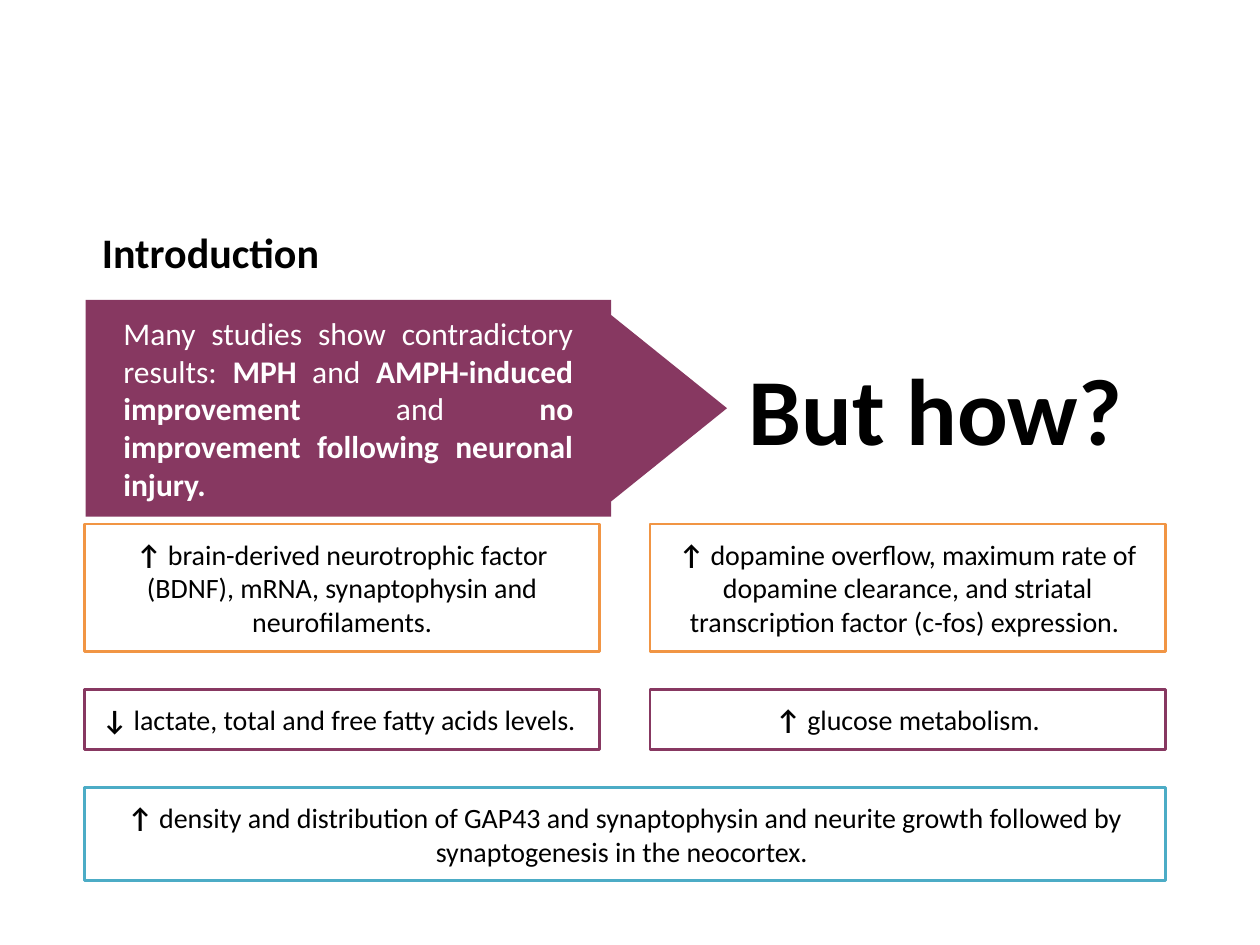
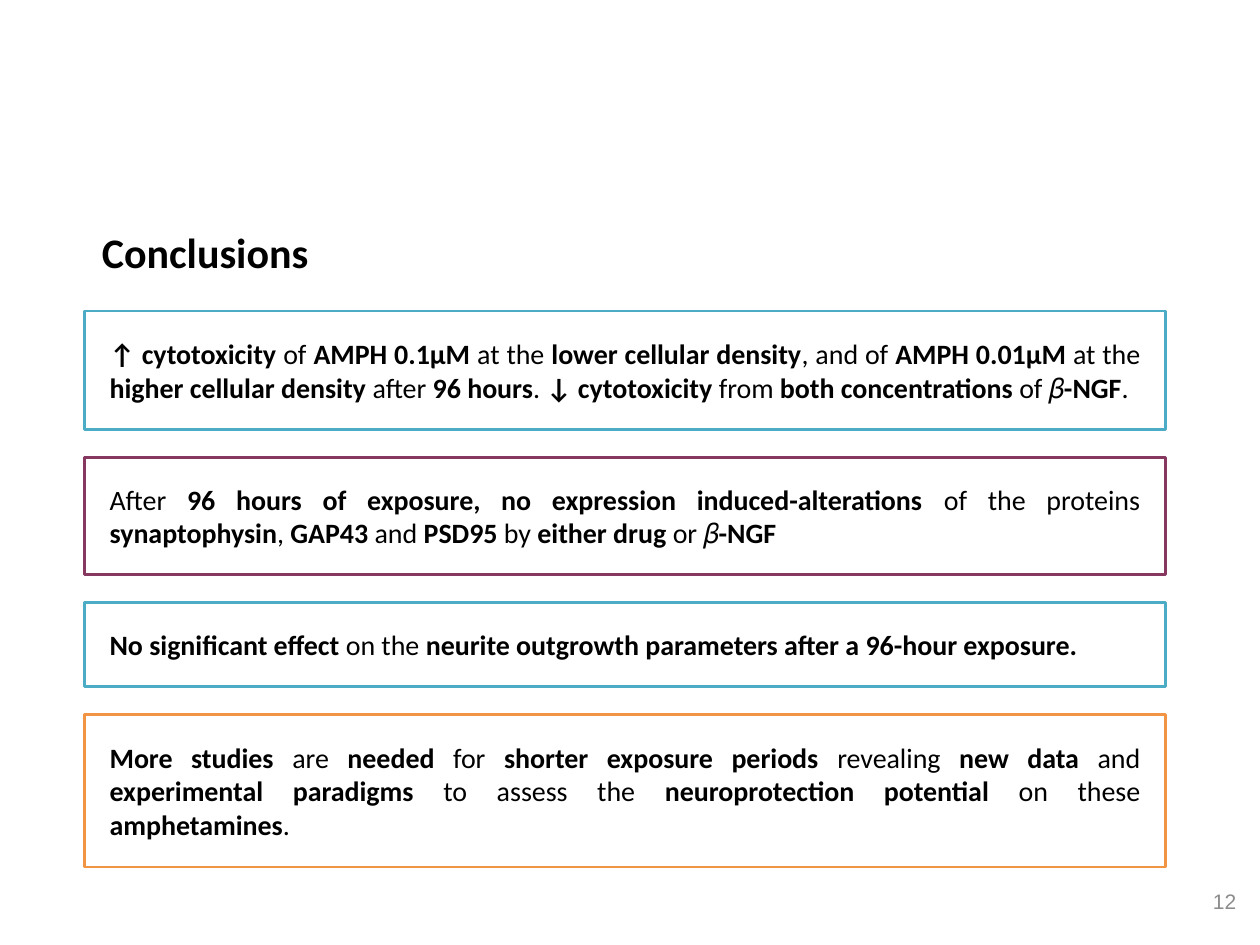
from pptx import Presentation
from pptx.dml.color import RGBColor
from pptx.enum.shapes import MSO_SHAPE as SHAPE
from pptx.enum.text import MSO_ANCHOR as ANCHOR, PP_ALIGN as ALIGN
from pptx.util import Inches, Pt

THEME = {
    "font": "Calibri", "number_font": "Arial",
    "black": "000000", "white": "FFFFFF", "grey": "8C8C8C",
    "blue": "4CACC6", "plum": "873861", "orange": "F19544",
    "title": 24, "body": 16, "claim": 18, "question": 54, "number": 12,
    "line": 1.5,
}
LEFT, WIDTH = 0.67, 8.58

CLAIM = ("Many studies show contradictory results: **MPH** and **AMPH-induced improvement** "
         "and **no improvement following neuronal injury.**")
QUESTION = "But how?"

FINDINGS = [
    (1.01, "orange", [
        "**↑ **brain-derived neurotrophic factor (BDNF), mRNA, synaptophysin and neurofilaments.",
        "**↑ **dopamine overflow, maximum rate of dopamine clearance, and striatal "
        "transcription factor (c-fos) expression. ",
    ]),
    (0.48, "plum", [
        "**↓ **lactate, total and free fatty acids levels. ",
        "**↑** glucose metabolism.",
    ]),
    (0.74, "blue", [
        "**↑ **density and distribution of GAP43 and synaptophysin and neurite growth "
        "followed by synaptogenesis in the neocortex. ",
    ]),
]

CONCLUSIONS = [
    (0.94, "blue", [
        "**↑ cytotoxicity** of **AMPH 0.1μM **at the **lower cellular density**, and of "
        "**AMPH 0.01μM **at the **higher cellular density **after **96 hours**. "
        "**↓ cytotoxicity** from **both concentrations **of **𝛽-NGF**.",
    ]),
    (0.93, "plum", [
        "After** 96 hours of exposure, no expression induced-alterations** of the proteins "
        "**synaptophysin**, **GAP43** and **PSD95** by **either drug **or** 𝛽-NGF**",
    ]),
    (0.67, "blue", [
        "**No significant effect **on the **neurite outgrowth parameters after a 96-hour exposure.**",
    ]),
    (1.21, "orange", [
        "**More studies **are **needed** for **shorter exposure periods **revealing **new data **and "
        "**experimental paradigms** to assess the **neuroprotection potential **on these "
        "**amphetamines**.",
    ]),
]


def write(sp, text, size, color="black", font="font", align=ALIGN.LEFT, inset=(0.1, 0.05), **frame):
    tf = sp.text_frame
    x, y = map(Inches, inset)
    settings = {"word_wrap": True, "margin_left": x, "margin_right": x,
                "margin_top": y, "margin_bottom": y, **frame}
    for name, value in settings.items():
        setattr(tf, name, value)
    p = tf.paragraphs[0]
    p.alignment = align
    for i, part in enumerate(text.split("**")):
        if part:
            r = p.add_run()
            r.text = part
            for name, value in {"name": THEME[font], "size": Pt(THEME[size]), "bold": i % 2 == 1}.items():
                setattr(r.font, name, value)
            r.font.color.rgb = RGBColor.from_string(THEME[color])


def add_text(s, box, text, size, **fmt):
    write(s.shapes.add_textbox(*map(Inches, box)), text, size, **fmt)


def add_block(s, kind, box, fill=None, line=None):
    sp = s.shapes.add_shape(kind, *map(Inches, box))
    sp.shadow.inherit = False
    if fill:
        sp.fill.solid()
        sp.fill.fore_color.rgb = RGBColor.from_string(THEME[fill])
    else:
        sp.fill.background()
    if line:
        sp.line.color.rgb = RGBColor.from_string(THEME[line])
        sp.line.width = Pt(THEME["line"])
    else:
        sp.line.fill.background()
    return sp


def add_rows(s, rows, top, gap, align, inset, col_gap=0.4):
    for height, color, texts in rows:
        width = (WIDTH - col_gap * (len(texts) - 1)) / len(texts)
        for i, text in enumerate(texts):
            box = (LEFT + i * (width + col_gap), top, width, height)
            sp = add_block(s, SHAPE.RECTANGLE, box, line=color)
            write(sp, text, "body", align=align, inset=(inset, inset), vertical_anchor=ANCHOR.MIDDLE)
        top += height + gap


def add_slide(prs, title):
    s = prs.slides.add_slide(prs.slide_layouts[6])
    add_text(s, (0.71, 1.75, WIDTH, 0.5), f"**{title}**", "title")
    return s


def main():
    prs = Presentation()
    prs.slide_width, prs.slide_height = Inches(10), Inches(7.5)

    s = add_slide(prs, "Introduction")
    add_rows(s, FINDINGS, 4.16, 0.3, ALIGN.CENTER, 0.1)
    sp = add_block(s, SHAPE.RECTANGLE, (0.68, 2.38, 4.17, 1.72), fill="plum")
    write(sp, CLAIM, "claim", color="white", align=ALIGN.JUSTIFY, inset=(0.3, 0.1),
          vertical_anchor=ANCHOR.MIDDLE)
    tip = add_block(s, SHAPE.ISOSCELES_TRIANGLE, (4.57, 2.78, 1.48, 0.92), fill="plum")
    tip.rotation = 90
    add_text(s, (5.83, 2.74, 3.19, 1.01), f"**{QUESTION}**", "question",
             align=ALIGN.CENTER, word_wrap=False)

    s = add_slide(prs, "Conclusions")
    add_rows(s, CONCLUSIONS, 2.47, 0.22, ALIGN.JUSTIFY, 0.2)
    add_text(s, (7.58, 6.95, 2.33, 0.4), "12", "number", color="grey", font="number_font",
             align=ALIGN.RIGHT, vertical_anchor=ANCHOR.MIDDLE)

    prs.save("out.pptx")


if __name__ == "__main__":
    main()
